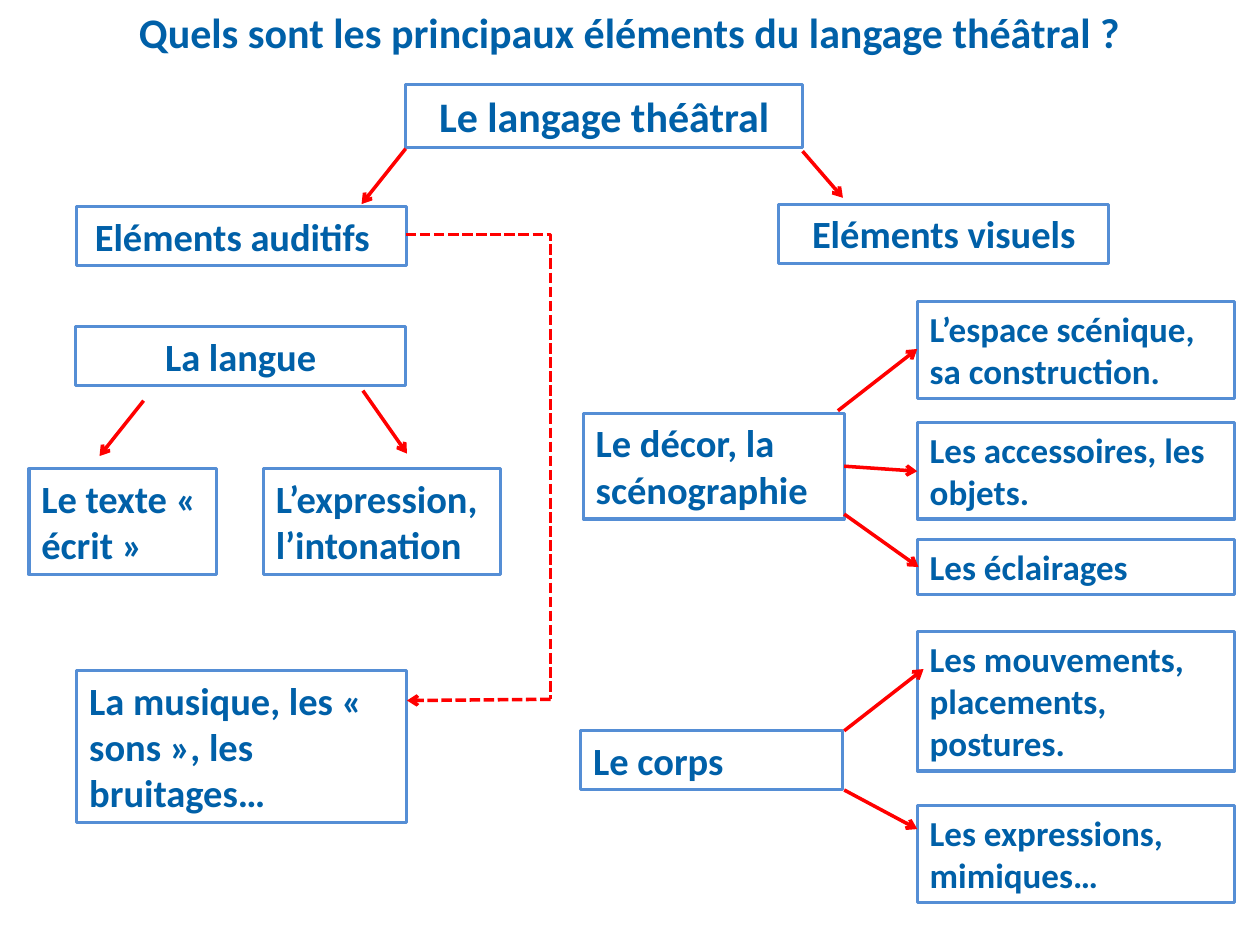
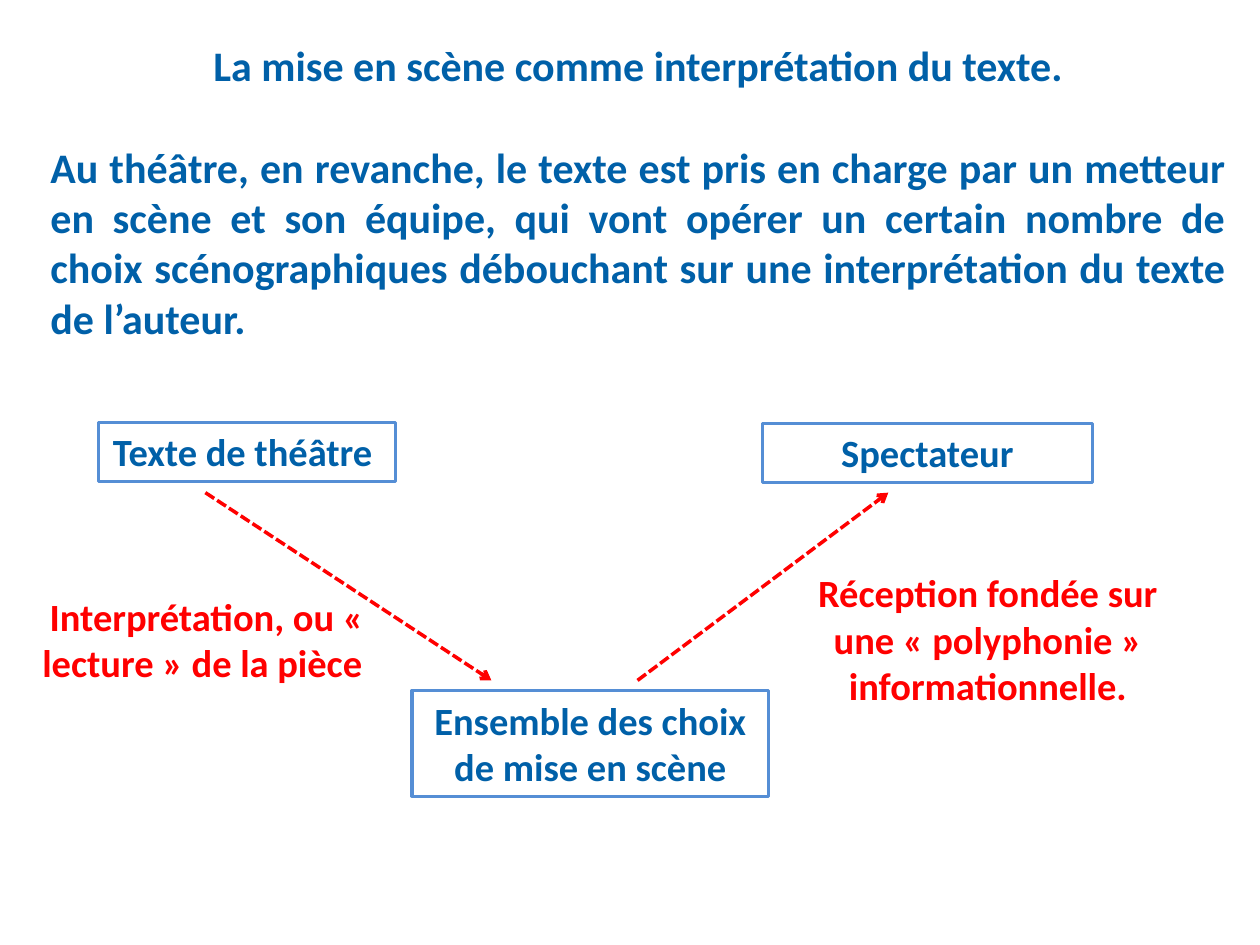
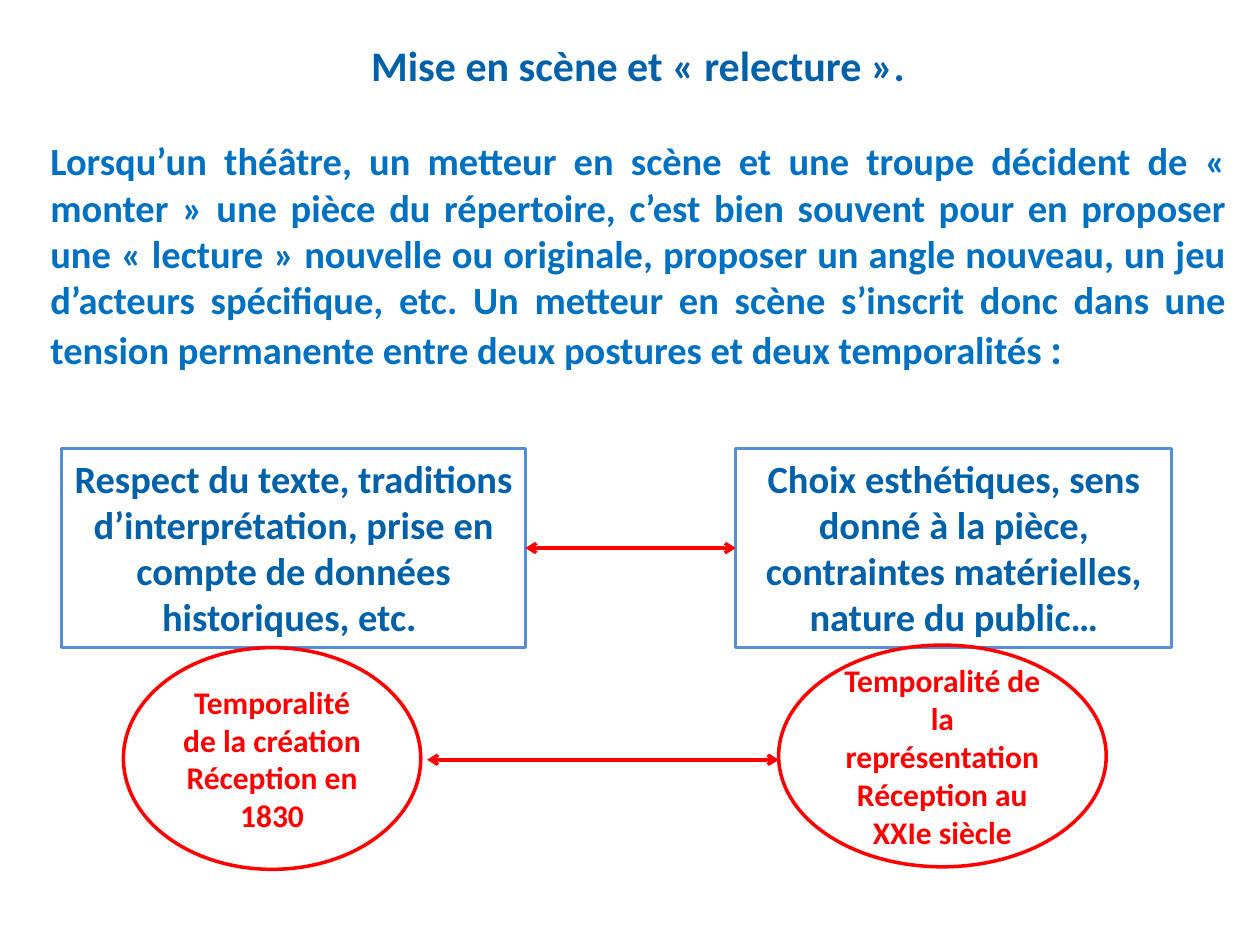
from dataclasses import dataclass

from lxml import etree
from pptx import Presentation
from pptx.dml.color import RGBColor
from pptx.enum.dml import MSO_LINE
from pptx.enum.shapes import MSO_CONNECTOR, MSO_SHAPE
from pptx.enum.text import MSO_ANCHOR, MSO_AUTO_SIZE, PP_ALIGN
from pptx.oxml.ns import qn
from pptx.util import Inches, Pt

LEFT, CENTER, JUSTIFY = PP_ALIGN.LEFT, PP_ALIGN.CENTER, PP_ALIGN.JUSTIFY
TOP, MIDDLE = MSO_ANCHOR.TOP, MSO_ANCHOR.MIDDLE
NO_FIT = MSO_AUTO_SIZE.NONE
RECT, CIRCLE = MSO_SHAPE.RECTANGLE, MSO_SHAPE.FLOWCHART_CONNECTOR
STRAIGHT, ELBOW = MSO_CONNECTOR.STRAIGHT, MSO_CONNECTOR.ELBOW
DASH = MSO_LINE.SQUARE_DOT
TITLE_ONLY, TITLE_AND_CONTENT = 5, 1


@dataclass(frozen=True)
class Theme:
    """Colours, font, type sizes and line widths of the deck."""
    text: RGBColor = RGBColor(0x00, 0x60, 0xA8)
    bright: RGBColor = RGBColor(0x00, 0x70, 0xC0)
    border: RGBColor = RGBColor(0x55, 0x8E, 0xD5)
    accent: RGBColor = RGBColor(0xFF, 0x00, 0x00)
    font: str = "Calibri"
    large: int = 24
    medium: int = 22
    small: int = 20
    tiny: int = 18
    box_line: float = 1.75
    accent_line: float = 2


T = Theme()


def place(sp, left, top, width, height):
    """Move and size a shape, in inches."""
    sp.left, sp.top = Inches(left), Inches(top)
    sp.width, sp.height = Inches(width), Inches(height)


def text_height(lines, size):
    """Return the height in inches of a box that fits its lines."""
    return round(0.1 + lines * size * 0.0168, 2)


def setup_frame(tf, anchor=TOP):
    """Make a text frame wrap at a fixed size."""
    tf.word_wrap = True
    tf.auto_size = NO_FIT
    tf.vertical_anchor = anchor


def add_run(p, text, size, color):
    """Append one bold run to a paragraph."""
    r = p.add_run()
    r.text = text
    r.font.name, r.font.size, r.font.bold = T.font, Pt(size), True
    r.font.color.rgb = color


def write(tf, paragraphs, size, color, align):
    """Write plain paragraphs into an empty text frame."""
    for i, text in enumerate(paragraphs):
        p = tf.add_paragraph() if i else tf.paragraphs[0]
        p.alignment = align
        add_run(p, text, size, color)


def add_slide(prs, layout, title, left, top):
    """Add a slide with its centred title."""
    s = prs.slides.add_slide(prs.slide_layouts[layout])
    place(s.shapes.title, left, top, 9.53, text_height(1, T.large))
    setup_frame(s.shapes.title.text_frame)
    write(s.shapes.title.text_frame, [title], T.large, T.text, CENTER)
    return s


def add_body(s, top, height, runs):
    """Fill the body placeholder with one justified paragraph."""
    sp = s.placeholders[1]
    place(sp, 0.3, top, 9.53, height)
    setup_frame(sp.text_frame)
    p = sp.text_frame.paragraphs[0]
    p.alignment, p.space_before = JUSTIFY, Pt(0)
    pPr = p._p.get_or_add_pPr()
    pPr.set("marL", "0")
    pPr.set("indent", "0")
    etree.SubElement(pPr, qn("a:buNone"))
    for text, size, color in runs:
        add_run(p, text, size, color)


def add_outline(s, kind, left, top, width, height, color, weight):
    """Add an unfilled outlined shape."""
    sp = s.shapes.add_shape(kind, Inches(left), Inches(top), Inches(width), Inches(height))
    sp.shadow.inherit = False
    sp.fill.background()
    sp.line.color.rgb, sp.line.width = color, Pt(weight)
    return sp


def add_box(s, text, left, top, width, lines=1, size=T.medium, align=CENTER):
    """Add a blue box as tall as its lines of text."""
    sp = add_outline(s, RECT, left, top, width, text_height(lines, size), T.border, T.box_line)
    setup_frame(sp.text_frame)
    write(sp.text_frame, [text], size, T.text, align)
    return sp


def add_circle(s, paragraphs, left, top, width):
    """Add a red ellipse with centred text."""
    sp = add_outline(s, CIRCLE, left, top, width, 1.76, T.accent, T.accent_line)
    setup_frame(sp.text_frame, MIDDLE)
    write(sp.text_frame, paragraphs, T.tiny, T.accent, CENTER)


def add_label(s, text, left, top, lines):
    """Add a red caption without outline."""
    sp = s.shapes.add_textbox(Inches(left), Inches(top), Inches(3.02),
                              Inches(text_height(lines, T.medium)))
    setup_frame(sp.text_frame)
    write(sp.text_frame, [text], T.medium, T.accent, CENTER)


def add_line(s, start, end, ends=("tailEnd",), dashed=False, kind=STRAIGHT):
    """Add a red connector with open arrowheads at the given ends."""
    c = s.shapes.add_connector(kind, *(Inches(v) for v in (*start, *end)))
    c.line.color.rgb, c.line.width = T.accent, Pt(T.accent_line)
    if dashed:
        c.line.dash_style = DASH
    spPr = c.element.spPr
    for name in ends:
        etree.SubElement(spPr.find(qn("a:ln")), qn(f"a:{name}"), type="arrow")
    etree.SubElement(spPr, qn("a:effectLst"))
    if kind == ELBOW:
        spPr.find(qn("a:prstGeom")).set("prst", "bentConnector2")


def build_language(prs):
    """Build the tree of the elements of stage language."""
    s = add_slide(prs, TITLE_ONLY,
                  "Quels sont les principaux éléments du langage théâtral ? ", 0.27, 0)
    add_box(s, "Le langage théâtral", 3.22, 0.67, 3.15, size=T.large)
    auditory = add_box(s, "Eléments auditifs", 0.61, 1.64, 2.62)
    auditory.text_frame.margin_right = Inches(0.25)
    add_box(s, "Eléments visuels", 6.18, 1.62, 2.62)
    add_box(s, "La langue", 0.6, 2.59, 2.62)
    for text, left, top, width, lines in (
        ("Le décor, la scénographie", 4.63, 3.28, 2.07, 2),
        ("Le corps", 4.61, 5.8, 2.08, 1),
        ("Le texte « écrit »", 0.23, 3.72, 1.49, 2),
        ("La musique, les « sons », les bruitages…", 0.61, 5.32, 2.62, 3),
        ("L’expression, l’intonation", 2.09, 3.72, 1.88, 2),
    ):
        add_box(s, text, left, top, width, lines, align=LEFT)
    for text, top, lines in (
        ("L’espace scénique, sa construction.", 2.39, 2),
        ("Les accessoires, les objets.", 3.35, 2),
        ("Les éclairages", 4.28, 1),
        ("Les mouvements, placements, postures.", 5.01, 3),
        ("Les expressions, mimiques…", 6.39, 2),
    ):
        add_box(s, text, 7.28, top, 2.52, lines, T.small, LEFT)
    for start, end in (
        ((3.22, 1.18), (2.87, 1.62)), ((6.37, 1.2), (6.69, 1.57)),
        ((6.65, 3.26), (7.28, 2.77)), ((6.7, 3.7), (7.28, 3.74)),
        ((6.7, 4.08), (7.29, 4.5)), ((6.7, 5.8), (7.33, 5.31)),
        ((6.7, 6.27), (7.28, 6.58)), ((2.88, 3.1), (3.23, 3.6)),
        ((1.14, 3.18), (0.79, 3.62)),
    ):
        add_line(s, start, end)
    add_line(s, (3.22, 1.86), (4.37, 5.55), ends=(), dashed=True, kind=ELBOW)
    add_line(s, (4.37, 5.55), (3.23, 5.56), dashed=True)


def build_staging(prs):
    """Build the path from the text to the spectator."""
    s = add_slide(prs, TITLE_AND_CONTENT,
                  "La mise en scène comme interprétation du texte.", 0.3, 0.26)
    add_body(s, 1.07, 2.1, [(
        "Au théâtre, en revanche, le texte est pris en charge par un metteur en scène "
        "et son équipe, qui vont opérer un certain nombre de choix scénographiques "
        "débouchant sur une interprétation du texte de l’auteur. ", T.large, T.text)])
    add_box(s, "Texte de théâtre ", 0.78, 3.35, 2.36)
    add_box(s, "Spectateur", 6.05, 3.36, 2.62)
    add_box(s, "Ensemble des choix de mise en scène", 3.27, 5.48, 2.83, 2)
    add_label(s, "Interprétation, ou « lecture » de la pièce ", 0.13, 4.66, 2)
    add_label(s, "Réception fondée sur une « polyphonie » informationnelle.", 6.33, 4.47, 3)
    add_line(s, (1.63, 3.91), (3.9, 5.4), dashed=True)
    add_line(s, (5.06, 5.4), (7.05, 3.91), dashed=True)


def build_rereading(prs):
    """Build the tension between two stances and two periods."""
    s = add_slide(prs, TITLE_AND_CONTENT, "Mise en scène et « relecture ».", 0.3, 0.26)
    add_body(s, 1.04, 2.2, [
        ("Lorsqu’un théâtre, un metteur en scène et une troupe décident de « monter » "
         "une pièce du répertoire, c’est bien souvent pour en proposer une « lecture » "
         "nouvelle ou originale, proposer un angle nouveau, un jeu d’acteurs spécifique, "
         "etc. Un metteur en scène s’inscrit donc dans une tension permanente entre deux "
         "postures et deux temporalités ", T.medium, T.bright),
        (":", T.large, T.bright)])
    add_box(s, "Respect du texte, traditions d’interprétation, prise en compte de données "
               "historiques, etc. ", 0.49, 3.56, 3.68, 4)
    add_box(s, "Choix esthétiques, sens donné à la pièce, contraintes matérielles, "
               "nature du public…", 5.84, 3.56, 3.46, 4)
    add_circle(s, ["Temporalité de la création", "Réception en 1830"], 0.98, 5.14, 2.36)
    add_circle(s, ["Temporalité de la représentation", "Réception au XXIe siècle"],
               6.18, 5.12, 2.6)
    for left, right, y in ((4.17, 5.84, 4.35), (3.39, 6.18, 6.03)):
        add_line(s, (left, y), (right, y), ends=("headEnd", "tailEnd"))


def main():
    """Build the three slides and save them."""
    prs = Presentation()
    prs.slide_width, prs.slide_height = Inches(10), Inches(7.5)
    build_language(prs)
    build_staging(prs)
    build_rereading(prs)
    prs.save("out.pptx")


if __name__ == "__main__":
    main()
